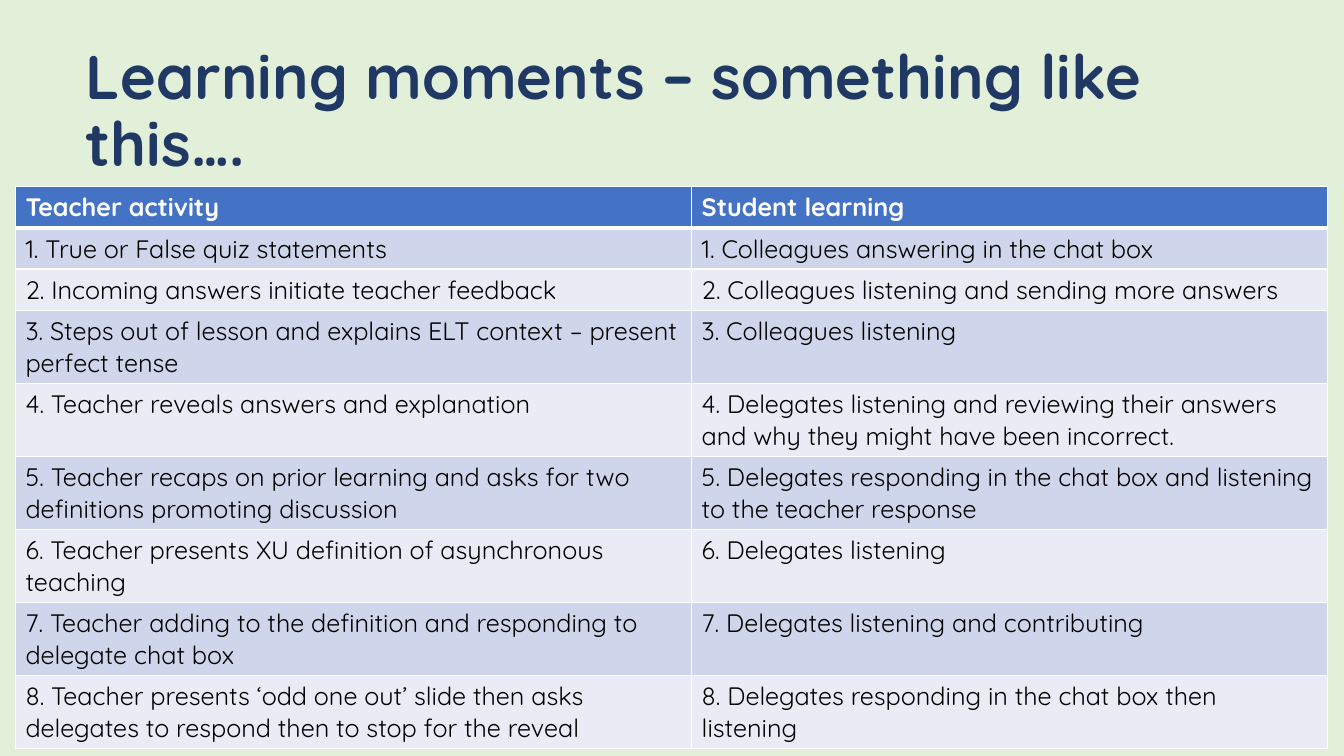
import pptx
import pptx.util
import pptx.dml.color
import pptx.enum.text
import pptx.oxml
import pptx.oxml.ns
from pptx.util import Cm

COLOURS = {
    "background": "E2F0D9",
    "title": "203864",
    "header": "4472C4",
    "odd_row": "CFD5EA",
    "even_row": "E9EBF5",
    "white": "FFFFFF",
    "black": "000000",
}
FONT = "Quicksand"
ONE_LINE, TWO_LINES = Cm(1.04), Cm(1.84)
COLUMN_WIDTHS = [Cm(17.04), Cm(16.03)]

HEADINGS = ("Teacher activity", "Student learning")
MOMENTS = [
    ("True or False quiz statements",
     "Colleagues answering in the chat box", ONE_LINE),
    ("Incoming answers initiate teacher feedback",
     "Colleagues listening and sending more answers", ONE_LINE),
    ("Steps out of lesson and explains ELT context – present perfect tense",
     "Colleagues listening", TWO_LINES),
    ("Teacher reveals answers and explanation",
     "Delegates listening and reviewing their answers and why they might have been incorrect.",
     TWO_LINES),
    ("Teacher recaps on prior learning and asks for two definitions promoting discussion",
     "Delegates responding in the chat box and listening to the teacher response", TWO_LINES),
    ("Teacher presents XU definition of asynchronous teaching",
     "Delegates listening", TWO_LINES),
    ("Teacher adding to the definition and responding to delegate chat box",
     "Delegates listening and contributing", TWO_LINES),
    ("Teacher presents ‘odd one out’ slide then asks delegates to respond then to stop for the reveal",
     "Delegates responding in the chat box then listening", TWO_LINES),
]


def rgb(name):
    return pptx.dml.color.RGBColor.from_string(COLOURS[name])


def write(text_frame, text, size, colour, bold):
    paragraph = text_frame.paragraphs[0]
    paragraph.text = text
    paragraph.font.name = FONT
    paragraph.font.size = pptx.util.Pt(size)
    paragraph.font.bold = bold
    paragraph.font.color.rgb = rgb(colour)
    return paragraph


def add_title(slide, text):
    title = slide.shapes.add_textbox(Cm(1.91), Cm(1.01), Cm(29.64), Cm(3.68))
    title.text_frame.word_wrap = True
    title.text_frame.vertical_anchor = pptx.enum.text.MSO_ANCHOR.MIDDLE
    write(title.text_frame, text, 44, "title", True).line_spacing = 0.9


def set_borders(cell, widths):
    properties = cell._tc.get_or_add_tcPr()
    for position, (side, width) in enumerate(widths.items()):
        border = pptx.oxml.parse_xml(
            f'<a:ln{side} {pptx.oxml.ns.nsdecls("a")} w="{pptx.util.Pt(width)}">'
            f'<a:solidFill><a:srgbClr val="{COLOURS["white"]}"/></a:solidFill></a:ln{side}>'
        )
        properties.insert(position, border)


def fill_row(row, texts, height, fill, colour, bold, top=1, bottom=1):
    row.height = height
    for cell, text in zip(row.cells, texts):
        cell.fill.solid()
        cell.fill.fore_color.rgb = rgb(fill)
        set_borders(cell, {"L": 1, "R": 1, "T": top, "B": bottom})
        write(cell.text_frame, text, 18, colour, bold)


def add_moments_table(slide):
    height = ONE_LINE + sum(moment[2] for moment in MOMENTS)
    table = slide.shapes.add_table(
        len(MOMENTS) + 1, len(HEADINGS), Cm(0.39), Cm(4.7), sum(COLUMN_WIDTHS), height
    ).table
    for column, width in zip(table.columns, COLUMN_WIDTHS):
        column.width = width
    fill_row(table.rows[0], HEADINGS, ONE_LINE, "header", "white", True, bottom=3)
    for number, (activity, learning, row_height) in enumerate(MOMENTS, 1):
        texts = [f"{number}. {text}" for text in (activity, learning)]
        fill = "odd_row" if number % 2 else "even_row"
        top = 3 if number == 1 else 1
        fill_row(table.rows[number], texts, row_height, fill, "black", False, top=top)


def main():
    presentation = pptx.Presentation()
    presentation.slide_width = Cm(33.87)
    presentation.slide_height = Cm(19.05)
    slide = presentation.slides.add_slide(presentation.slide_layouts[6])
    slide.background.fill.solid()
    slide.background.fill.fore_color.rgb = rgb("background")
    add_title(slide, "Learning moments – something like this….")
    add_moments_table(slide)
    presentation.save("out.pptx")


if __name__ == "__main__":
    main()
